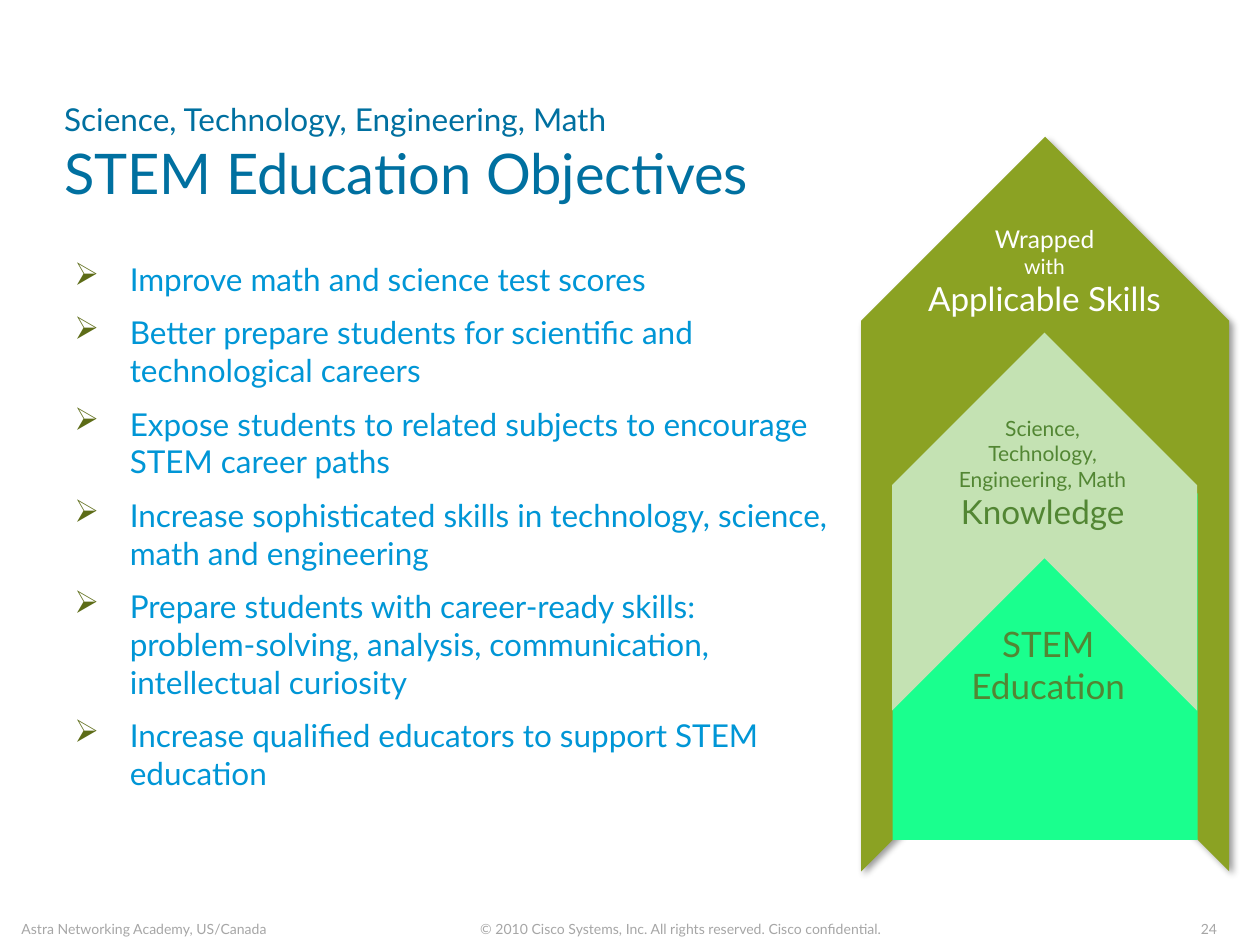
from dataclasses import dataclass

from lxml import etree
from pptx import Presentation
from pptx.dml.color import RGBColor
from pptx.enum.shapes import MSO_SHAPE
from pptx.enum.text import MSO_ANCHOR, MSO_AUTO_SIZE, PP_ALIGN
from pptx.oxml.ns import qn
from pptx.util import Inches, Pt

FONT = "Lato"
COLORS = {
    "title": "0070A0",
    "objective": "0096D6",
    "bullet": "5D6C17",
    "footer": "A6A6A6",
    "skills": "8BA223",
    "knowledge": "C4E2B3",
    "education": "1AFF8E",
    "label": "528633",
    "white": "FFFFFF",
    "shadow": "000000",
}
OBJECTIVES = [
    "Improve math and science test scores",
    "Better prepare students for scientific and technological careers",
    "Expose students to related subjects to encourage STEM career paths",
    "Increase sophisticated skills in technology, science, math and engineering",
    "Prepare students with career-ready skills: problem-solving, analysis, "
    "communication, intellectual curiosity",
    "Increase qualified educators to support STEM education",
]


@dataclass
class Layer:
    """An upward-pointing layer; the box is given before its quarter turn."""
    preset: MSO_SHAPE
    box: tuple[float, float, float, float]
    color: str
    shadowed: bool = False


@dataclass
class TextBlock:
    box: tuple[float, float, float, float]
    lines: list[tuple[str, float]]
    color: str
    align: PP_ALIGN = PP_ALIGN.CENTER
    anchor: MSO_ANCHOR = MSO_ANCHOR.TOP
    margins: tuple[float, float] = (0.1, 0.05)
    wrap: bool = False
    grow: bool = True
    bulleted: bool = False


SLIM = (0.09, 0.04)
FOOTER = dict(color="footer", anchor=MSO_ANCHOR.BOTTOM, margins=SLIM)

FOOTERS = [
    TextBlock((9.43, 7.25, 0.32, 0.23), [("24", 8)], align=PP_ALIGN.RIGHT, **FOOTER),
    TextBlock((3.58, 7.25, 3.65, 0.23),
              [("© 2010 Cisco Systems, Inc. All rights reserved. Cisco confidential.", 8)],
              **FOOTER),
    TextBlock((0.08, 7.25, 2.42, 0.23), [("Astra Networking Academy, US/Canada", 8)],
              align=PP_ALIGN.LEFT, wrap=True, **FOOTER),
]
LAYERS = [
    Layer(MSO_SHAPE.CHEVRON, (5.38, 2.54, 5.83, 2.92), "skills", shadowed=True),
    Layer(MSO_SHAPE.RECTANGLE, (6.92, 4.08, 2.75, 2.42), "education"),
    Layer(MSO_SHAPE.CHEVRON, (6.79, 2.93, 3, 2.42), "knowledge"),
]
TEXTS = [
    TextBlock((0.42, 0.75, 9.5, 0.92),
              [("Science, Technology, Engineering, Math", 18),
               ("STEM Education Objectives", 32)],
              "title", PP_ALIGN.LEFT, MSO_ANCHOR.BOTTOM, SLIM, wrap=True, grow=False),
    TextBlock((0.5, 2.02, 6.17, 4.48), [(objective, 18) for objective in OBJECTIVES],
              "objective", PP_ALIGN.LEFT, margins=SLIM, wrap=True, bulleted=True),
    TextBlock((7.58, 4.89, 1.48, 0.77), [("STEM", 20), ("Education", 20)], "label"),
    TextBlock((7.47, 3.25, 1.61, 1.03),
              [("Science,", 12), ("Technology,", 12), ("Engineering, Math", 12),
               ("Knowledge", 19)], "label"),
    TextBlock((7.08, 1.73, 2.42, 0.86),
              [("Wrapped", 14), ("with", 12), ("Applicable Skills", 19)],
              "white", wrap=True),
]


def rgb(name: str) -> RGBColor:
    return RGBColor.from_string(COLORS[name])


def add_shadow(shape) -> None:
    effects = shape._element.spPr.find(qn("a:effectLst"))
    shadow = etree.SubElement(
        effects, qn("a:outerShdw"), blurRad=str(Pt(4)), dist=str(Pt(3)),
        dir=str(45 * 60000), algn="tl", rotWithShape="0")
    color = etree.SubElement(shadow, qn("a:srgbClr"), val=COLORS["shadow"])
    etree.SubElement(color, qn("a:alpha"), val="40000")


def add_layer(slide, layer: Layer) -> None:
    shape = slide.shapes.add_shape(layer.preset, *map(Inches, layer.box))
    shape.rotation = 270
    shape.shadow.inherit = False
    shape.fill.solid()
    shape.fill.fore_color.rgb = rgb(layer.color)
    shape.line.fill.background()
    if layer.shadowed:
        add_shadow(shape)


def add_bullet(paragraph) -> None:
    """Give the paragraph a coloured arrow bullet and a hanging indent."""
    properties = paragraph._p.get_or_add_pPr()
    properties.set("marL", str(Inches(0.44)))
    properties.set("indent", str(-Inches(0.44)))
    bullet_color = etree.SubElement(properties, qn("a:buClr"))
    etree.SubElement(bullet_color, qn("a:srgbClr"), val=COLORS["bullet"])
    etree.SubElement(properties, qn("a:buChar"), char="➢")


def add_text(slide, block: TextBlock) -> None:
    frame = slide.shapes.add_textbox(*map(Inches, block.box)).text_frame
    frame.word_wrap = block.wrap
    frame.auto_size = MSO_AUTO_SIZE.SHAPE_TO_FIT_TEXT if block.grow else MSO_AUTO_SIZE.NONE
    frame.vertical_anchor = block.anchor
    side, end = map(Inches, block.margins)
    frame.margin_left = frame.margin_right = side
    frame.margin_top = frame.margin_bottom = end
    frame.text = "\n".join(text for text, _ in block.lines)
    for index, (paragraph, (_, size)) in enumerate(zip(frame.paragraphs, block.lines)):
        paragraph.alignment = block.align
        if block.bulleted:
            add_bullet(paragraph)
            if index:
                paragraph.space_before = Pt(9)
        font = paragraph.runs[0].font
        font.name = FONT
        font.size = Pt(size)
        font.color.rgb = rgb(block.color)


def main() -> None:
    presentation = Presentation()
    presentation.slide_width = Inches(10)
    presentation.slide_height = Inches(7.5)
    slide = presentation.slides.add_slide(presentation.slide_layouts[6])
    for layer in LAYERS:
        add_layer(slide, layer)
    for block in FOOTERS + TEXTS:
        add_text(slide, block)
    presentation.save("out.pptx")


if __name__ == "__main__":
    main()
